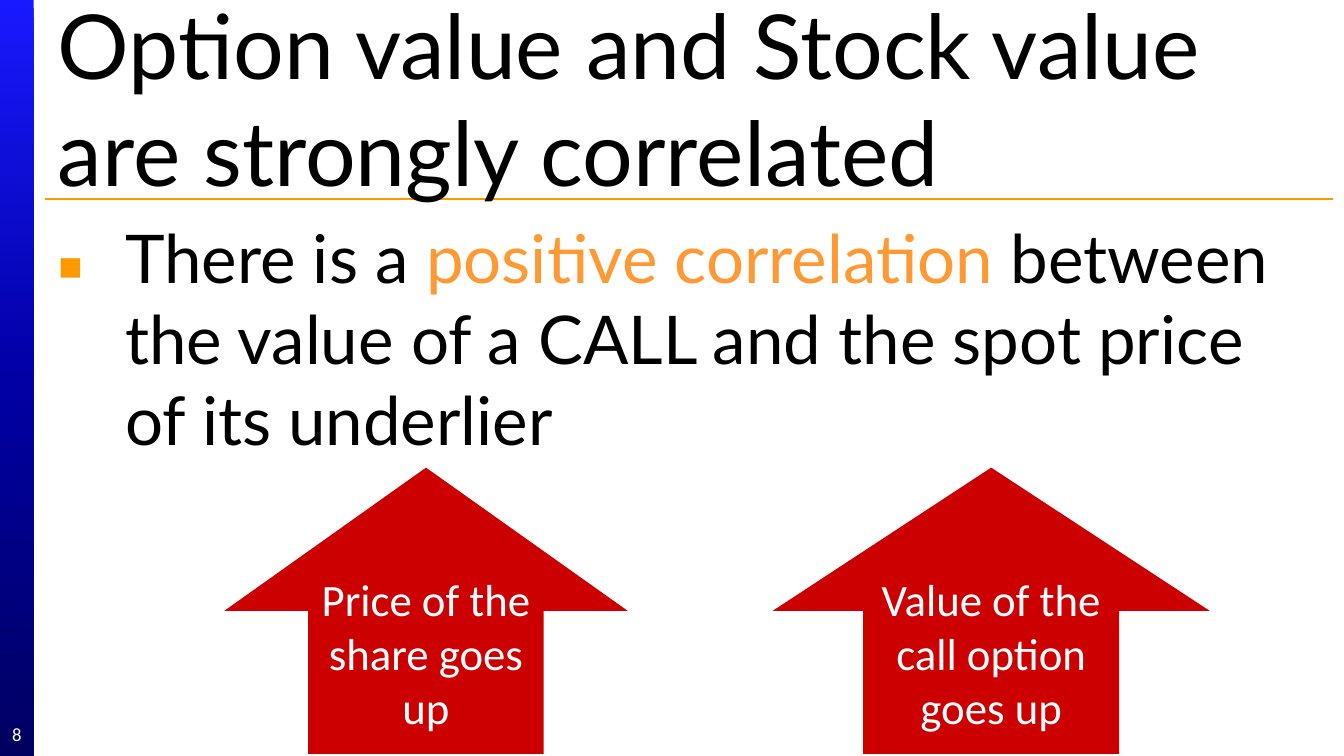
from copy import deepcopy

from lxml.etree import SubElement
from pptx import Presentation
from pptx.dml.color import RGBColor
from pptx.enum.shapes import MSO_CONNECTOR, MSO_SHAPE
from pptx.enum.text import MSO_ANCHOR, PP_ALIGN
from pptx.oxml.ns import qn
from pptx.util import Inches, Pt

BLACK = RGBColor(0x00, 0x00, 0x00)
WHITE = RGBColor(0xFF, 0xFF, 0xFF)
RED = RGBColor(0xCC, 0x00, 0x00)
AMBER = RGBColor(0xFF, 0x99, 0x00)
ORANGE = RGBColor(0xFF, 0x99, 0x33)
BAND_STOPS = [
    (0, RGBColor(0x19, 0x19, 0xFF)),
    (0.5, RGBColor(0x00, 0x00, 0xA5)),
    (1, RGBColor(0x00, 0x00, 0x60)),
]

TITLE = "Option value and Stock value are strongly correlated"
STATEMENT = [
    ("There is a ", BLACK),
    ("positive correlation ", ORANGE),
    ("between the value of a CALL and the spot price of its underlier", BLACK),
]
ARROWS = [
    ("Price of the share goes up", 1.67, 3, 0.584),
    ("Value of the call option goes up", 5.75, 3.25, 0.586),
]
PAGE_NUMBER = "8"

WIDTH = 10
HEIGHT = WIDTH * 9 / 16
BAND_WIDTH = WIDTH / 40
LEFT = WIDTH / 30
RIGHT = WIDTH - LEFT / 4
RULE_Y = 1.48
BODY_TOP = HEIGHT / 3.6
ARROW_TOP = 3.48
ARROW_HEIGHT = 2.13
HEAD_SHARE = 0.5


def set_font(paragraph, name, size, color=None):
    paragraph.font.name = name
    paragraph.font.size = Pt(size)
    if color is not None:
        paragraph.font.color.rgb = color


def add_text_area(slide, left, top, width, height, anchor=MSO_ANCHOR.TOP):
    area = slide.shapes.add_textbox(*map(Inches, (left, top, width, height)))
    area.text_frame.word_wrap = True
    area.text_frame.vertical_anchor = anchor
    return area.text_frame


def add_filled(slide, preset, left, top, width, height):
    shape = slide.shapes.add_shape(preset, *map(Inches, (left, top, width, height)))
    shape.shadow.inherit = False
    shape.line.fill.background()
    return shape


def add_band(slide):
    band = add_filled(slide, MSO_SHAPE.RECTANGLE, 0, 0, BAND_WIDTH, HEIGHT)
    band.fill.gradient()
    band.fill.gradient_angle = 270
    stop_list = band._element.spPr.find(qn("a:gradFill")).find(qn("a:gsLst"))
    stop_list.append(deepcopy(stop_list[-1]))
    for stop, (position, color) in zip(band.fill.gradient_stops, BAND_STOPS):
        stop.position = position
        stop.color.rgb = color


def add_rule(slide):
    rule = slide.shapes.add_connector(
        MSO_CONNECTOR.STRAIGHT, *map(Inches, (LEFT, RULE_Y, RIGHT, RULE_Y))
    )
    rule.line.color.rgb = AMBER
    rule.line.width = Pt(0.75)
    SubElement(rule._element.spPr, qn("a:effectLst"))


def add_title(slide):
    title = add_text_area(slide, LEFT, 0.06, RIGHT - LEFT, 1.33, MSO_ANCHOR.MIDDLE)
    title.text = TITLE
    set_font(title.paragraphs[0], "Lato", 48, BLACK)


def add_statement(slide):
    area = add_text_area(slide, LEFT, BODY_TOP, 9.5, HEIGHT - BODY_TOP)
    statement = area.paragraphs[0]
    properties = statement._p.get_or_add_pPr()
    properties.set("marL", str(Inches(0.5)))
    properties.set("indent", str(-Inches(0.5)))
    bullet_color = SubElement(properties, qn("a:buClr"))
    SubElement(bullet_color, qn("a:srgbClr"), val=str(AMBER))
    SubElement(properties, qn("a:buFont"), typeface="Noto Sans Symbols")
    SubElement(properties, qn("a:buChar"), char="▪")
    set_font(statement, "Lato", 36)
    for words, color in STATEMENT:
        run = statement.add_run()
        run.text = words
        run.font.color.rgb = color


def add_page_number(slide):
    number = add_text_area(slide, 0, 5.31, BAND_WIDTH, 0.3, MSO_ANCHOR.MIDDLE)
    number.margin_left = number.margin_right = 0
    number.margin_top = number.margin_bottom = 0
    number.text = PAGE_NUMBER
    number.paragraphs[0].alignment = PP_ALIGN.CENTER
    set_font(number.paragraphs[0], "Calibri", 10, WHITE)


def add_arrow(slide, label, left, width, shaft_share):
    arrow = add_filled(slide, MSO_SHAPE.UP_ARROW, left, ARROW_TOP, width, ARROW_HEIGHT)
    arrow.adjustments[0] = shaft_share
    arrow.adjustments[1] = HEAD_SHARE
    arrow.fill.solid()
    arrow.fill.fore_color.rgb = RED
    arrow.text_frame.word_wrap = True
    arrow.text_frame.vertical_anchor = MSO_ANCHOR.MIDDLE
    arrow.text_frame.text = label
    arrow.text_frame.paragraphs[0].alignment = PP_ALIGN.CENTER
    set_font(arrow.text_frame.paragraphs[0], "Calibri", 24, WHITE)


def main():
    deck = Presentation()
    deck.slide_width, deck.slide_height = Inches(WIDTH), Inches(HEIGHT)
    slide = deck.slides.add_slide(deck.slide_layouts[6])
    add_band(slide)
    add_rule(slide)
    add_title(slide)
    add_statement(slide)
    add_page_number(slide)
    for label, left, width, shaft_share in ARROWS:
        add_arrow(slide, label, left, width, shaft_share)
    deck.save("out.pptx")


if __name__ == "__main__":
    main()
